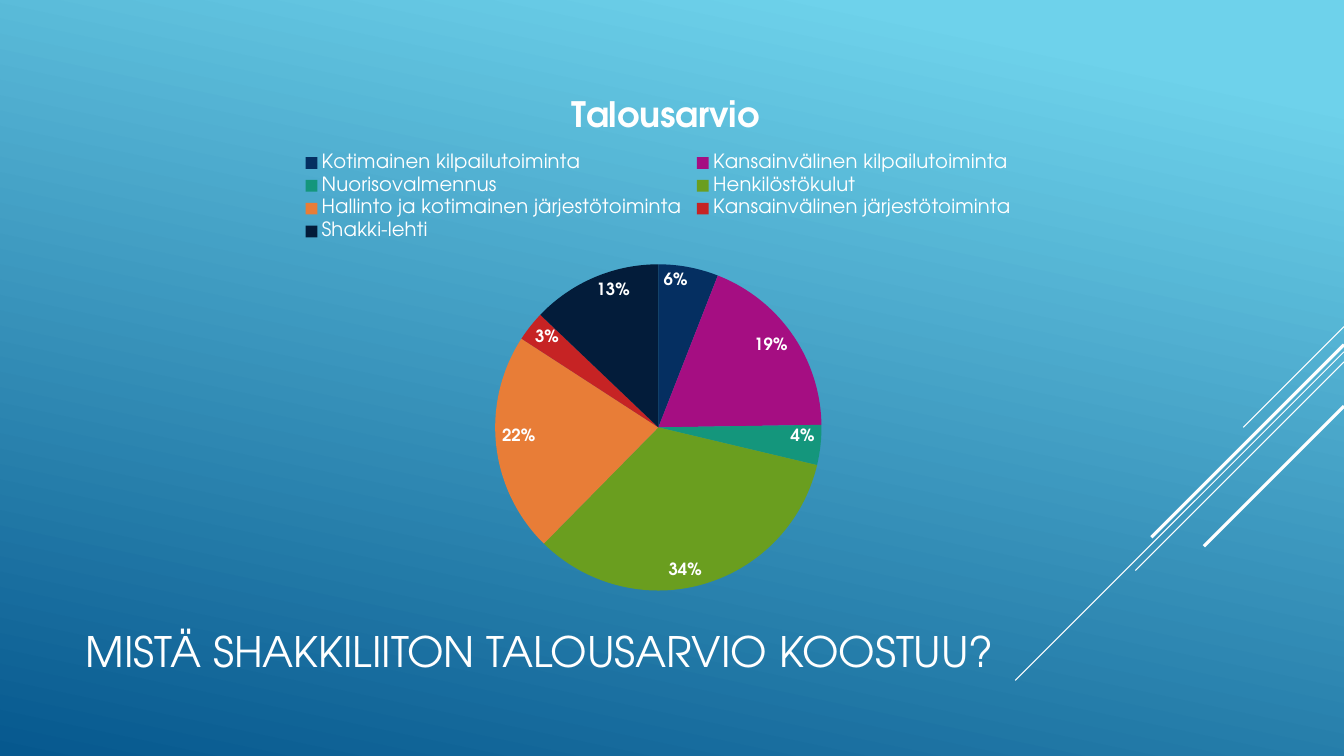
"""Build the slide that shows what the chess federation's budget consists of."""
import pptx
import pptx.chart.data
import pptx.dml.color
import pptx.enum.chart
import pptx.enum.shapes
import pptx.enum.text
import pptx.oxml
import pptx.oxml.ns
import pptx.util

RGB = pptx.dml.color.RGBColor
Inches, Pt = pptx.util.Inches, pptx.util.Pt

WIDTH, HEIGHT = 13.33, 7.5
FONT = "TeX Gyre Adventor"
WHITE = RGB(0xFF, 0xFF, 0xFF)
SKY = RGB(0x6E, 0xD2, 0xEB)
DEEP_BLUE = RGB(0x06, 0x58, 0x8E)

QUESTION = "MISTÄ SHAKKILIITON TALOUSARVIO KOOSTUU?"
HEADING = "Talousarvio"
BUDGET = [
    ("Kotimainen kilpailutoiminta", 6, RGB(0x05, 0x2F, 0x61)),
    ("Kansainvälinen kilpailutoiminta", 19, RGB(0xA5, 0x0E, 0x82)),
    ("Nuorisovalmennus", 4, RGB(0x14, 0x96, 0x7C)),
    ("Henkilöstökulut", 34, RGB(0x6A, 0x9E, 0x1F)),
    ("Hallinto ja kotimainen järjestötoiminta", 22, RGB(0xE8, 0x7D, 0x37)),
    ("Kansainvälinen järjestötoiminta", 3, RGB(0xC6, 0x23, 0x24)),
    ("Shakki-lehti", 13, RGB(0x03, 0x1C, 0x3A)),
]
QUESTION_BOX = (0.75, 5.63, 9.33, 1.65)
BUDGET_BOX = (0.75, 0.75, 11.56, 5.25)
HEADING_SHARE = {"x": 0.42, "y": 0.03}
LEGEND_SHARE = {"x": 0.19, "y": 0.14, "w": 0.62, "h": 0.18}
PIE_SHARE = {"x": 0.36, "y": 0.35, "w": 0.28, "h": 0.63}
DIAGONALS = [
    (3.24, 1.0, 0.75),
    (3.49, 3.26, 0.75),
    (3.59, 2.07, 0.75),
    (3.42, 1.91, 2.25),
    (4.03, 1.39, 2.25),
]


def style(font, size, bold=False):
    """Give a font the slide's typeface and white colour."""
    font.name, font.size, font.bold = FONT, Pt(size), bold
    font.color.rgb = WHITE


def place(part, shares, inner=False):
    """Fix a chart part at shares of the chart's size."""
    qn = pptx.oxml.ns.qn
    for automatic in part.findall(qn("c:layout")):
        part.remove(automatic)
    target = '<c:layoutTarget val="inner"/>' if inner else ""
    modes = "".join(f'<c:{key}Mode val="edge"/>' for key in "xy")
    sizes = "".join(f'<c:{key} val="{share}"/>' for key, share in shares.items())
    layout = pptx.oxml.parse_xml(
        f'<c:layout {pptx.oxml.ns.nsdecls("c")}><c:manualLayout>'
        f"{target}{modes}{sizes}</c:manualLayout></c:layout>"
    )
    before = [child for child in part if child.tag in (qn("c:tx"), qn("c:legendPos"))]
    part.insert(len(before), layout)


def add_background(slide):
    """Fill the slide with a slanted blue gradient."""
    fill = slide.background.fill
    fill.gradient()
    fill.gradient_angle = 360 - 102
    for stop, (position, colour) in zip(
        fill.gradient_stops, [(0.1, SKY), (1.0, DEEP_BLUE)]
    ):
        stop.position = position
        stop.color.rgb = colour


def add_diagonals(slide):
    """Draw the 45-degree lines that run in from the right edge."""
    for top, reach, weight in DIAGONALS:
        diagonal = slide.shapes.add_connector(
            pptx.enum.shapes.MSO_CONNECTOR.STRAIGHT,
            Inches(WIDTH), Inches(top), Inches(WIDTH - reach), Inches(top + reach),
        )
        diagonal.line.color.rgb = WHITE
        diagonal.line.width = Pt(weight)
        diagonal.element.spPr.append(
            pptx.oxml.parse_xml(f'<a:effectLst {pptx.oxml.ns.nsdecls("a")}/>')
        )


def add_question(slide):
    """Put the question in the title placeholder."""
    question = slide.shapes.title
    question.left, question.top, question.width, question.height = map(
        Inches, QUESTION_BOX
    )
    frame = question.text_frame
    frame.text = QUESTION
    frame.word_wrap = True
    frame.vertical_anchor = pptx.enum.text.MSO_ANCHOR.MIDDLE
    frame.paragraphs[0].alignment = pptx.enum.text.PP_ALIGN.LEFT
    style(frame.paragraphs[0].runs[0].font, 30)


def add_budget(slide):
    """Add the budget pie with its heading, legend and percentages."""
    names, shares, colours = zip(*BUDGET)
    data = pptx.chart.data.CategoryChartData()
    data.categories = names
    data.add_series("Series 1", shares)
    budget = slide.shapes.add_chart(
        pptx.enum.chart.XL_CHART_TYPE.PIE, *map(Inches, BUDGET_BOX), data
    ).chart
    style(budget.font, 10)

    budget.has_title = True
    heading = budget.chart_title.text_frame
    heading.text = HEADING
    style(heading.paragraphs[0].runs[0].font, 25, bold=True)
    budget.chart_title.include_in_layout = False

    budget.has_legend = True
    budget.legend.position = pptx.enum.chart.XL_LEGEND_POSITION.TOP
    budget.legend.include_in_layout = False
    style(budget.legend.font, 14)

    pie = budget.plots[0]
    pie.vary_by_categories = True
    for index, colour in enumerate(colours):
        fill = pie.series[0].points[index].format.fill
        fill.solid()
        fill.fore_color.rgb = colour
    labels = pie.series[0].data_labels
    labels.show_percentage = True
    labels.show_value = False
    labels.number_format = "0%"
    labels.number_format_is_linked = False
    labels.position = pptx.enum.chart.XL_LABEL_POSITION.INSIDE_END
    style(labels.font, 12, bold=True)

    chart = budget.element.chart
    place(chart.title, HEADING_SHARE)
    place(chart.legend, LEGEND_SHARE)
    place(chart.plotArea, PIE_SHARE, inner=True)


def main():
    """Assemble and save the presentation."""
    deck = pptx.Presentation()
    deck.slide_width, deck.slide_height = Inches(WIDTH), Inches(HEIGHT)
    slide = deck.slides.add_slide(deck.slide_layouts.get_by_name("Title Only"))
    add_background(slide)
    add_diagonals(slide)
    add_question(slide)
    add_budget(slide)
    deck.save("out.pptx")


if __name__ == "__main__":
    main()
